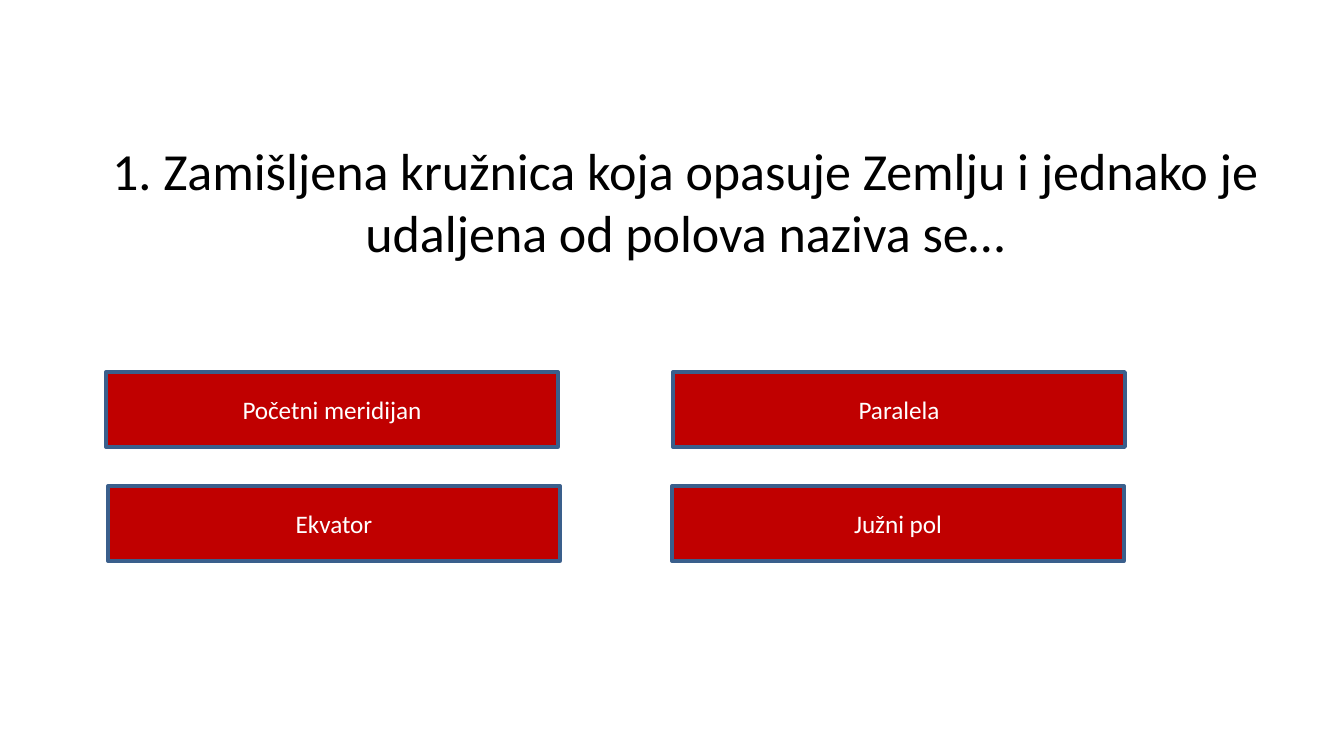
from dataclasses import dataclass

from pptx import Presentation
from pptx.dml.color import RGBColor
from pptx.enum.shapes import MSO_SHAPE
from pptx.enum.text import MSO_ANCHOR, MSO_AUTO_SIZE, PP_ALIGN
from pptx.util import Inches, Pt

PX_PER_INCH = 134.4


@dataclass(frozen=True)
class Theme:
    """Colours, font and sizes of the quiz slide."""
    font: str = "Calibri"
    question_size: float = 27.9
    answer_size: float = 13.5
    border_width: float = 2
    question_color: str = "000000"
    answer_color: str = "FFFFFF"
    answer_fill: str = "C00000"
    answer_border: str = "3A5F8C"


THEME = Theme()
QUESTION = ("1. Zamišljena kružnica koja opasuje Zemlju i jednako je "
            "udaljena od polova naziva se…")
ANSWER_WIDTH, ANSWER_HEIGHT = 452, 75
UPPER_ROW, LOWER_ROW = 372, 486
ANSWERS = (
    ("Ekvator", 108, LOWER_ROW),
    ("Početni meridijan", 106, UPPER_ROW),
    ("Paralela", 673, UPPER_ROW),
    ("Južni pol", 672, LOWER_ROW),
)


def px(length):
    """Turn whole pixels into EMU."""
    return Inches(length / PX_PER_INCH)


def write_centred(shape, text, size, color):
    """Put one centred paragraph in the middle of a shape."""
    frame = shape.text_frame
    frame.word_wrap = True
    frame.auto_size = MSO_AUTO_SIZE.NONE
    frame.vertical_anchor = MSO_ANCHOR.MIDDLE
    frame.text = text
    paragraph = frame.paragraphs[0]
    paragraph.alignment = PP_ALIGN.CENTER
    paragraph.font.name = THEME.font
    paragraph.font.size = Pt(size)
    paragraph.font.color.rgb = RGBColor.from_string(color)


def set_question(slide, text):
    """Place and format the title as the quiz question."""
    title = slide.shapes.title
    title.left, title.top, title.width, title.height = map(px, (80, 148, 1210, 105))
    write_centred(title, text, THEME.question_size, THEME.question_color)


def add_answer(slide, text, left, top):
    """Add one answer button."""
    button = slide.shapes.add_shape(
        MSO_SHAPE.RECTANGLE, px(left), px(top), px(ANSWER_WIDTH), px(ANSWER_HEIGHT))
    button.shadow.inherit = False
    button.fill.solid()
    button.fill.fore_color.rgb = RGBColor.from_string(THEME.answer_fill)
    button.line.color.rgb = RGBColor.from_string(THEME.answer_border)
    button.line.width = Pt(THEME.border_width)
    write_centred(button, text, THEME.answer_size, THEME.answer_color)


def main():
    """Build and save the quiz slide."""
    presentation = Presentation()
    presentation.slide_width, presentation.slide_height = px(1344), px(756)
    slide = presentation.slides.add_slide(presentation.slide_layouts[5])
    set_question(slide, QUESTION)
    for text, left, top in ANSWERS:
        add_answer(slide, text, left, top)
    presentation.save("out.pptx")


if __name__ == "__main__":
    main()
